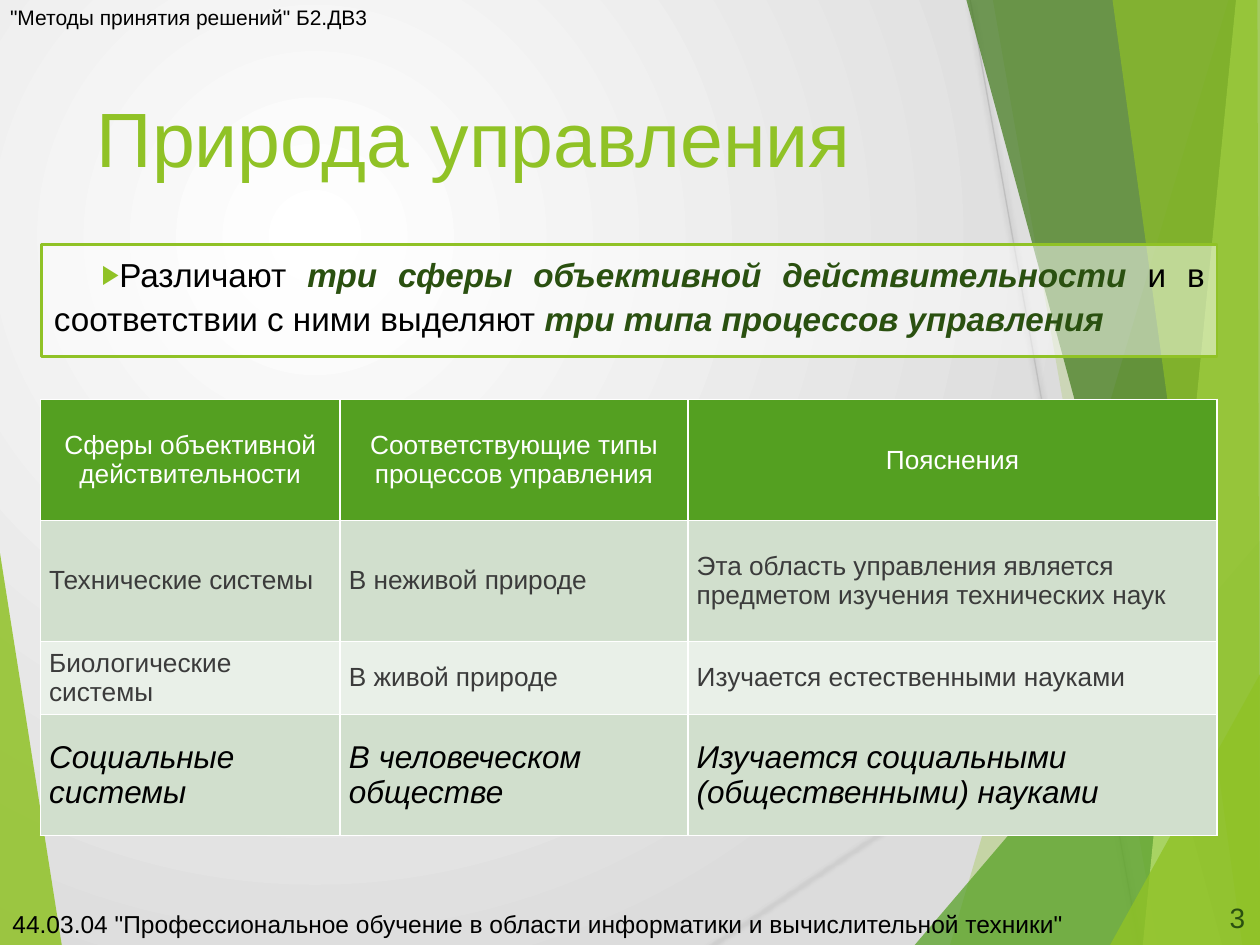
from dataclasses import dataclass

from lxml import etree
from pptx import Presentation
from pptx.dml.color import RGBColor
from pptx.enum import shapes, text
from pptx.oxml.ns import qn
from pptx.util import Pt


@dataclass(frozen=True)
class Theme:
    font: str = "Arial"
    lime: str = "90C226"
    pale_lime: str = "C0E474"
    green: str = "54A021"
    forest: str = "3F7819"
    deep: str = "2A5010"
    band: str = "D1DFCD"
    light_band: str = "E9F0E8"
    white: str = "FFFFFF"
    backdrop: str = "DCDCDC"
    silver: str = "D9D9D9"
    gray: str = "BFBFBF"
    ink: str = "3B3B3B"
    black: str = "000000"
    title: int = 44
    lead: int = 19
    accent: int = 18
    number: int = 16
    cell: int = 15
    footer: int = 14
    header: int = 12


def write(tf, words, size, color, align=text.PP_ALIGN.LEFT, anchor=text.MSO_ANCHOR.TOP,
          bold=False, italic=False):
    tf.word_wrap = True
    tf.vertical_anchor = anchor
    p = tf.paragraphs[0]
    p.alignment = align
    r = p.add_run()
    r.text = words
    r.font.name = theme.font
    r.font.size = Pt(size)
    r.font.bold = bold
    r.font.italic = italic
    r.font.color.rgb = RGBColor.from_string(color)


def paint(sp, color, opacity):
    sp.shadow.inherit = False
    sp.fill.solid()
    sp.fill.fore_color.rgb = RGBColor.from_string(color)
    clr = sp.element.spPr.find(qn("a:solidFill"))[0]
    etree.SubElement(clr, qn("a:alpha"), val=str(opacity * 1000))


theme = Theme()
prs = Presentation()
prs.slide_width, prs.slide_height = Pt(720), Pt(540)
unit = prs.slide_width // 100
slide = prs.slides.add_slide(prs.slide_layouts[6])

fill = slide.background.fill
fill.gradient()
for stop, color in zip(fill.gradient_stops, (theme.white, theme.backdrop)):
    stop.color.rgb = RGBColor.from_string(color)
grad = slide.element.find(".//" + qn("a:gradFill"))
grad.remove(grad.find(qn("a:lin")))
radial = etree.SubElement(grad, qn("a:path"), path="circle")
etree.SubElement(radial, qn("a:fillToRect"), l="50000", t="50000", r="100000", b="100000")

facets = [
    (theme.lime, 85, [(0, 43.9), (4.9, 75), (0, 75)]),
    (theme.silver, 0, [(56.1, 75), (100, 45.7)]),
    (theme.gray, 0, [(77, 0), (90.4, 75)]),
    (theme.lime, 30, [(97.5, 0), (75.4, 75), (100, 75), (100, 0)]),
    (theme.lime, 20, [(78.8, 0), (91.9, 75), (100, 75), (100, 0)]),
    (theme.green, 72, [(72.6, 75), (100, 42.9), (100, 75)]),
    (theme.forest, 70, [(76.7, 0), (97, 75), (100, 75), (100, 0)]),
    (theme.pale_lime, 70, [(98.1, 0), (90.7, 75), (100, 75), (100, 0)]),
    (theme.lime, 65, [(88.3, 0), (98.6, 75), (100, 75), (99.8, 0)]),
    (theme.lime, 80, [(88.1, 75), (100, 53.5), (100, 75)]),
]
for color, opacity, corners in facets:
    points = [(int(x * unit), int(y * unit)) for x, y in corners]
    if len(points) == 2:
        sp = slide.shapes.add_connector(shapes.MSO_CONNECTOR.STRAIGHT, *points[0], *points[1])
        sp.line.color.rgb = RGBColor.from_string(color)
        sp.line.width = Pt(0.75)
        effects = etree.SubElement(sp.element.spPr, qn("a:effectLst"))
        shadow = etree.SubElement(effects, qn("a:outerShdw"), blurRad=str(Pt(3)),
                                  dist=str(Pt(2)), dir="5400000", rotWithShape="0")
        clr = etree.SubElement(shadow, qn("a:srgbClr"), val=theme.black)
        etree.SubElement(clr, qn("a:alpha"), val="28000")
    else:
        builder = slide.shapes.build_freeform(*points[0])
        builder.add_line_segments(points[1:])
        sp = builder.convert_to_shape()
        paint(sp, color, opacity)
        sp.line.fill.background()

middle = text.MSO_ANCHOR.MIDDLE
right = text.PP_ALIGN.RIGHT
labels = [
    ((6.7, 6.7, 69.4, 14.4), "Природа управления", theme.title, theme.lime, {}),
    ((94.2, 70.8, 5.6, 4), "3", theme.number, theme.deep, dict(align=right, anchor=middle)),
    ((0.1, 0, 66.5, 3), '"Методы принятия решений" Б2.ДВ3', theme.header, theme.black, {}),
    ((0, 71.8, 94.2, 3),
     '44.03.04 "Профессиональное обучение в области информатики и вычислительной техники"',
     theme.footer, theme.black, dict(anchor=middle)),
]
for box, words, size, color, style in labels:
    tf = slide.shapes.add_textbox(*[int(v * unit) for v in box]).text_frame
    write(tf, words, size, color, **style)
    if size == theme.header:
        tf.margin_left = tf.margin_right = int(0.7 * unit)
        tf.margin_top = tf.margin_bottom = int(0.4 * unit)

rows = [
    ("Сферы объективной действительности", "Соответствующие типы процессов управления", "Пояснения"),
    ("Технические системы", "В неживой природе",
     "Эта область управления является предметом изучения технических наук"),
    ("Биологические системы", "В живой природе", "Изучается естественными науками"),
    ("Социальные системы", "В человеческом обществе",
     "Изучается социальными (общественными) науками"),
]
left = text.PP_ALIGN.LEFT
looks = [
    (9.6, theme.green, theme.white, theme.cell, text.PP_ALIGN.CENTER, False),
    (9.6, theme.band, theme.ink, theme.cell, left, False),
    (5.7, theme.light_band, theme.ink, theme.cell, left, False),
    (9.6, theme.band, theme.black, theme.accent, left, True),
]
box = [int(v * unit) for v in (3.2, 31.7, 93.4, 34.5)]
table = slide.shapes.add_table(len(rows), 3, *box).table
table.first_row = table.horz_banding = False
for column, width in zip(table.columns, (23.8, 27.6, 42)):
    column.width = int(width * unit)
for row, words, (height, back, color, size, align, italic) in zip(table.rows, rows, looks):
    row.height = int(height * unit)
    for cell, entry in zip(row.cells, words):
        cell.margin_left = cell.margin_right = int(0.7 * unit)
        cell.margin_top = cell.margin_bottom = int(0.4 * unit)
        cell.vertical_anchor = middle
        write(cell.text_frame, entry, size, color, align=align, anchor=middle, italic=italic)
        tcPr = cell._tc.get_or_add_tcPr()
        for side in ("L", "R", "T", "B"):
            ln = etree.SubElement(tcPr, qn("a:ln" + side), w=str(Pt(1)))
            etree.SubElement(etree.SubElement(ln, qn("a:solidFill")), qn("a:srgbClr"), val=theme.white)
        cell.fill.solid()
        cell.fill.fore_color.rgb = RGBColor.from_string(back)

box = [int(v * unit) for v in (3.3, 19.4, 93.3, 8.9)]
sp = slide.shapes.add_shape(shapes.MSO_SHAPE.RECTANGLE, *box)
paint(sp, theme.white, 50)
sp.line.color.rgb = RGBColor.from_string(theme.lime)
sp.line.width = Pt(1.5)
phrases = [
    ("Различают ", False),
    ("три сферы объективной действительности ", True),
    ("и в соответствии с ними выделяют ", False),
    ("три типа процессов управления", True),
]
for words, strong in phrases:
    write(sp.text_frame, words, theme.lead, theme.deep if strong else theme.black,
          align=text.PP_ALIGN.JUSTIFY, bold=strong, italic=strong)
p = sp.text_frame.paragraphs[0]
p.line_spacing = 1.1
p.space_before = Pt(10)
pPr = p._p.get_or_add_pPr()
pPr.set("marL", "0")
pPr.set("indent", str(int(3.8 * unit)))
etree.SubElement(etree.SubElement(pPr, qn("a:buClr")), qn("a:srgbClr"), val=theme.lime)
etree.SubElement(pPr, qn("a:buSzPct"), val="80000")
etree.SubElement(pPr, qn("a:buFont"), typeface=theme.font)
etree.SubElement(pPr, qn("a:buChar"), char="▶")

prs.save("out.pptx")
